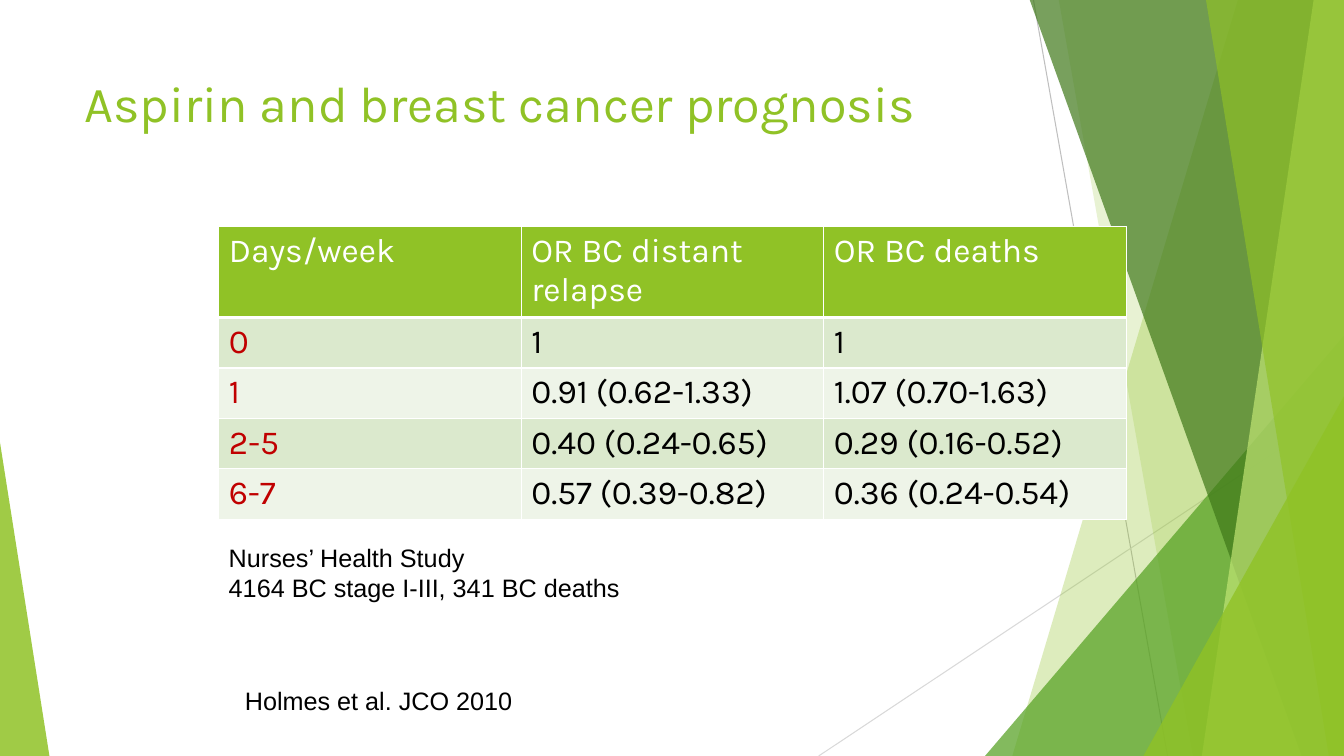
"""Build the slide on aspirin use and breast cancer prognosis."""
from dataclasses import dataclass

from lxml import etree
from pptx import Presentation
from pptx.dml.color import RGBColor
from pptx.enum.shapes import MSO_CONNECTOR, MSO_SHAPE
from pptx.oxml.ns import qn
from pptx.util import Emu, Pt

STRAIGHT = MSO_CONNECTOR.STRAIGHT
TRIANGLE = MSO_SHAPE.ISOSCELES_TRIANGLE
PX = 9144
WIDTH, HEIGHT = 1333, 750
TOP = -1


@dataclass(frozen=True)
class Theme:
    green: str = "90C226"
    mid_green: str = "54A021"
    dark_green: str = "3F7819"
    light_green: str = "C0E474"
    band_dark: str = "DBE9CD"
    band_light: str = "EEF4E8"
    red: str = "C00000"
    black: str = "000000"
    white: str = "FFFFFF"
    line_dark: str = "BFBFBF"
    line_light: str = "D9D9D9"
    heading_font: str = "Karla"
    note_font: str = "Arial"
    title_size: int = 36
    table_size: int = 24
    note_size: int = 18
    hairline: float = 0.75
    border: int = 1
    header_border: int = 3


THEME = Theme()


@dataclass(frozen=True)
class Line:
    start: tuple[int, int]
    end: tuple[int, int]
    color: str


@dataclass(frozen=True)
class Band:
    top_left: int
    bottom_left: int
    color: str
    alpha: int


@dataclass(frozen=True)
class Corner:
    left: int
    top: int
    width: int
    apex: int
    color: str
    alpha: int


@dataclass(frozen=True)
class TextBlock:
    box: tuple[int, int, int, int]
    lines: tuple[str, ...]
    font: str
    size: int
    color: str


LINES = (
    Line((1025, 0), (1158, HEIGHT), THEME.line_dark),
    Line((WIDTH, 403), (812, HEIGHT), THEME.line_light),
)
FACETS = (
    Band(1228, 1004, THEME.green, 30),
    Band(1050, 1183, THEME.green, 20),
    Corner(977, 333, 356, 1, THEME.mid_green, 72),
    Band(1021, 1291, THEME.dark_green, 70),
    Band(1303, 1192, THEME.light_green, 70),
    Band(1196, 1318, THEME.green, 65),
    Corner(1134, 393, 199, 1, THEME.green, 80),
    Corner(0, 439, 49, 0, THEME.green, 85),
)
TEXTS = (
    TextBlock((74, 67, 940, 144), ("Aspirin and breast cancer prognosis",),
              THEME.heading_font, THEME.title_size, THEME.green),
    TextBlock((217, 533, 551, 91),
              ("Nurses’ Health Study", "4164 BC stage I-III, 341 BC deaths"),
              THEME.note_font, THEME.note_size, THEME.black),
    TextBlock((233, 675, 378, 50), ("Holmes et al. JCO 2010",),
              THEME.note_font, THEME.note_size, THEME.black),
)
ROWS = (
    ("Days/week", "OR BC distant relapse", "OR BC deaths"),
    ("0", "1", "1"),
    ("1", "0.91 (0.62-1.33)", "1.07 (0.70-1.63)"),
    ("2-5", "0.40 (0.24-0.65)", "0.29 (0.16-0.52)"),
    ("6-7", "0.57 (0.39-0.82)", "0.36 (0.24-0.54)"),
)
TABLE_LEFT, TABLE_TOP = 217, 225
COLUMN_WIDTH, HEADER_HEIGHT, ROW_HEIGHT = 300, 90, 50


def px(*values: int) -> list[Emu]:
    return [Emu(value * PX) for value in values]


def add_run(p, text: str, font: str, size: int, color: str) -> None:
    r = p.add_run()
    r.text = text
    r.font.name, r.font.size, r.font.bold = font, Pt(size), False
    r.font.color.rgb = RGBColor.from_string(color)


def draw_line(s, line: Line) -> None:
    connector = s.shapes.add_connector(STRAIGHT, *px(*line.start, *line.end))
    connector.line.color.rgb = RGBColor.from_string(line.color)
    connector.line.width = Pt(THEME.hairline)
    etree.SubElement(connector._element.spPr, qn("a:effectLst"))


def draw_facet(s, facet: Band | Corner) -> None:
    if isinstance(facet, Band):
        builder = s.shapes.build_freeform(facet.top_left, TOP, scale=PX)
        builder.add_line_segments(
            [(WIDTH, TOP), (WIDTH, HEIGHT), (facet.bottom_left, HEIGHT)], close=True)
        sp = builder.convert_to_shape()
    else:
        sp = s.shapes.add_shape(
            TRIANGLE, *px(facet.left, facet.top, facet.width, HEIGHT - facet.top))
        sp.adjustments[0] = facet.apex
    sp.shadow.inherit = False
    sp.line.fill.background()
    sp.fill.solid()
    sp.fill.fore_color.rgb = RGBColor.from_string(facet.color)
    color = sp._element.spPr.find(qn("a:solidFill"))[0]
    etree.SubElement(color, qn("a:alpha"), val=str(facet.alpha * 1000))


def draw_text(s, block: TextBlock) -> None:
    tf = s.shapes.add_textbox(*px(*block.box)).text_frame
    tf.word_wrap = True
    for i, text in enumerate(block.lines):
        p = tf.add_paragraph() if i else tf.paragraphs[0]
        add_run(p, text, block.font, block.size, block.color)


def set_borders(cell, bottom: int) -> None:
    tc_pr = cell._tc.get_or_add_tcPr()
    widths = {"L": THEME.border, "R": THEME.border, "T": THEME.border, "B": bottom}
    for i, (side, width) in enumerate(widths.items()):
        ln = etree.Element(qn(f"a:ln{side}"), w=str(Pt(width)))
        fill = etree.SubElement(ln, qn("a:solidFill"))
        etree.SubElement(fill, qn("a:srgbClr"), val=THEME.white)
        tc_pr.insert(i, ln)


def cell_colors(row: int, column: int) -> tuple[str, str]:
    if row == 0:
        return THEME.green, THEME.white
    band = THEME.band_dark if row % 2 else THEME.band_light
    return band, THEME.black if column else THEME.red


def draw_table(s) -> None:
    columns = len(ROWS[0])
    height = HEADER_HEIGHT + ROW_HEIGHT * (len(ROWS) - 1)
    table = s.shapes.add_table(
        len(ROWS), columns,
        *px(TABLE_LEFT, TABLE_TOP, COLUMN_WIDTH * columns, height)).table
    table.horz_banding = False
    for i, row in enumerate(ROWS):
        table.rows[i].height = px(ROW_HEIGHT if i else HEADER_HEIGHT)[0]
        for j, text in enumerate(row):
            cell = table.cell(i, j)
            fill, color = cell_colors(i, j)
            cell.fill.solid()
            cell.fill.fore_color.rgb = RGBColor.from_string(fill)
            set_borders(cell, THEME.border if i else THEME.header_border)
            add_run(cell.text_frame.paragraphs[0], text,
                    THEME.heading_font, THEME.table_size, color)


def main() -> None:
    prs = Presentation()
    prs.slide_width, prs.slide_height = px(WIDTH, HEIGHT)
    s = prs.slides.add_slide(prs.slide_layouts[6])
    for line in LINES:
        draw_line(s, line)
    for facet in FACETS:
        draw_facet(s, facet)
    draw_table(s)
    for block in TEXTS:
        draw_text(s, block)
    prs.save("out.pptx")


if __name__ == "__main__":
    main()
